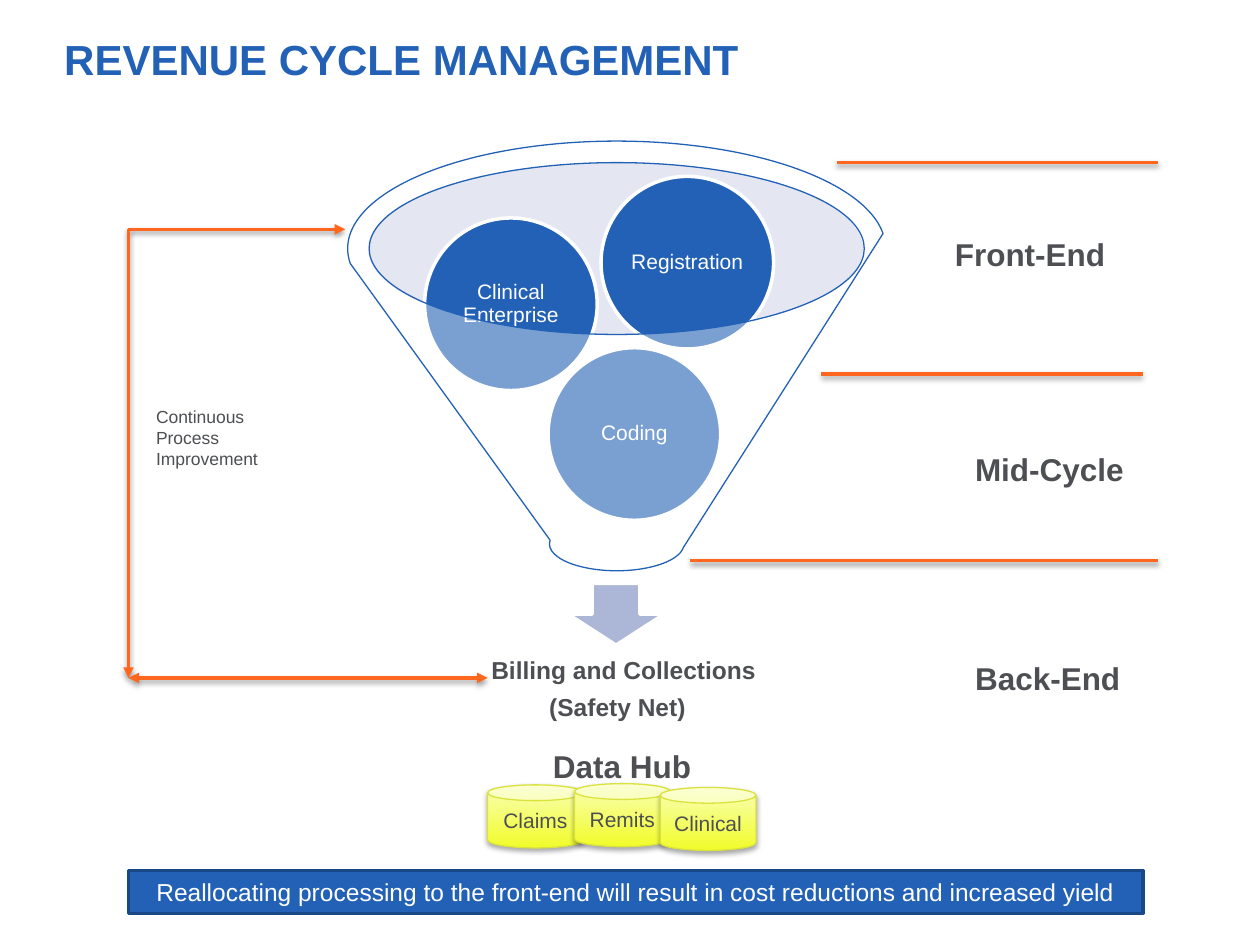
import lxml.etree
import pptx
import pptx.dml.color
import pptx.enum.shapes
import pptx.enum.text
import pptx.oxml.ns
import pptx.util

Inches, Pt = pptx.util.Inches, pptx.util.Pt
SHAPE = pptx.enum.shapes.MSO_SHAPE
ALIGN = pptx.enum.text.PP_ALIGN
ANCHOR = pptx.enum.text.MSO_ANCHOR
qn = pptx.oxml.ns.qn

FONT = "Arial"
COLORS = {
    "blue": "2261B5", "navy": "194886", "mist": "BDC5DE", "arrow": "ACB7D7",
    "orange": "FF671F", "gray": "4D4F53", "white": "FFFFFF", "black": "000000",
    "yellow": "F1FC2A", "pale_yellow": "F9FFB3", "can_edge": "DAE33D",
}


def rgb(name):
    return pptx.dml.color.RGBColor.from_string(COLORS[name])


def add_child(parent, tag, **attributes):
    child = lxml.etree.SubElement(parent, qn(tag))
    for key, value in attributes.items():
        child.set(key, str(value))
    return child


def add_shadow(effects, opacity):
    """Put a soft shadow that falls straight down into an effect list."""
    shadow = add_child(effects, "a:outerShdw", blurRad=Pt(3.1), dist=Pt(1.7),
                       dir=90 * 60000, rotWithShape=0)
    color = add_child(shadow, "a:srgbClr", val=COLORS["black"])
    add_child(color, "a:alpha", val=opacity * 1000)


def write(frame, lines, size, color="gray", bold=False, align=ALIGN.LEFT,
          spacing=None, after=None):
    frame.word_wrap = True
    for index, line in enumerate(lines):
        paragraph = frame.paragraphs[0] if index == 0 else frame.add_paragraph()
        paragraph.alignment = align
        paragraph.line_spacing = spacing
        paragraph.space_after = after
        run = paragraph.add_run()
        run.text = line
        run.font.name, run.font.size, run.font.bold = FONT, Pt(size), bold
        run.font.color.rgb = rgb(color)


def set_insets(frame, inset):
    frame.margin_left = frame.margin_right = Inches(inset)
    frame.margin_top = frame.margin_bottom = Inches(inset)


def add_label(slide, box, lines, size, **style):
    frame = slide.shapes.add_textbox(*map(Inches, box)).text_frame
    write(frame, lines, size, **style)
    return frame


def add_part(slide, kind, box, fill, line=None, width=0.75, opacity=None):
    part = slide.shapes.add_shape(kind, *map(Inches, box))
    part.shadow.inherit = False
    part.fill.solid()
    part.fill.fore_color.rgb = rgb(fill)
    if opacity is not None:
        color = part.fill._xPr.find(qn("a:solidFill"))[0]
        add_child(color, "a:alpha", val=opacity * 1000)
    if line:
        part.line.color.rgb = rgb(line)
        part.line.width = Pt(width)
    else:
        part.line.fill.background()
    return part


def add_rule(slide, start, end, arrowheads=()):
    rule = slide.shapes.add_connector(
        pptx.enum.shapes.MSO_CONNECTOR.STRAIGHT, *map(Inches, start + end))
    rule.line.color.rgb = rgb("orange")
    rule.line.width = Pt(2)
    for arrowhead in arrowheads:
        add_child(rule.line._get_or_add_ln(), arrowhead, type="triangle")
    add_shadow(add_child(rule._element.spPr, "a:effectLst"), 38)


def add_title(slide, box):
    title = slide.shapes.title
    title.left, title.top, title.width, title.height = map(Inches, box)
    title.text_frame.vertical_anchor = ANCHOR.TOP
    write(title.text_frame, ["REVENUE CYCLE MANAGEMENT"], 24, color="blue",
          bold=True, spacing=0.9)


def add_funnel(slide, box):
    """Funnel with the three inputs, its outlet arrow and the outcome."""
    left, top, width, height = box
    add_part(slide, SHAPE.OVAL, (left + 0.16, top + 0.17, 3.93, 1.37),
             "mist", opacity=40)
    add_part(slide, SHAPE.DOWN_ARROW, (left + 1.75, top + 3.51, 0.76, 0.49),
             "arrow", "white", 2)
    outcome = add_label(
        slide, (left + 0.23, top + 3.9, 3.82, 0.91),
        ["Billing and Collections", "(Safety Net)"], 14, bold=True,
        align=ALIGN.CENTER, spacing=0.9, after=Pt(6))
    set_insets(outcome, 0.11)
    outcome.vertical_anchor = ANCHOR.MIDDLE
    outcome.paragraphs[0]._p.get_or_add_pPr().set("marL", str(Inches(0.1)))

    inputs = [("Coding", 1.59, 1.64), ("Clinical Enterprise", 0.61, 0.61),
              ("Registration", 2.01, 0.28)]
    for name, dx, dy in inputs:
        circle = add_part(slide, SHAPE.OVAL, (left + dx, top + dy, 1.37, 1.37),
                          "blue", "white", 2)
        set_insets(circle.text_frame, 0.02)
        circle.text_frame.vertical_anchor = ANCHOR.MIDDLE
        write(circle.text_frame, [name], 12, color="white",
              align=ALIGN.CENTER, spacing=0.9)
    add_part(slide, SHAPE.FUNNEL, (left, top, width, height), "white", "blue",
             opacity=40)


def add_stages(slide, box):
    """Stage names at the right, each under its dividing line."""
    left, top, width, _ = box
    right = left + width
    stages = [("Front-End", 1.16, 3.71, 0, 2.0, 0.53),
              ("Mid-Cycle", 1.04, 3.59, 1.68, 2.16, 2.23),
              ("Back-End", 0, 3.71, 3.16, 2.16, 3.89)]
    for name, start, end, line_y, name_x, name_y in stages:
        add_rule(slide, (left + start, top + line_y), (left + end, top + line_y))
        add_label(slide, (left + name_x, top + name_y, right - left - 1.69, 0.4),
                  [name], 18, bold=True)


def add_feedback_loop(slide, box):
    left, top, width, height = box
    bottom = top + height
    add_rule(slide, (left, top), (left + 1.72, top), ["a:tailEnd"])
    add_rule(slide, (left, top), (left, bottom), ["a:tailEnd"])
    add_rule(slide, (left, bottom), (left + width, bottom),
             ["a:headEnd", "a:tailEnd"])
    add_label(slide, (left + 0.12, top + 1.35, 1.14, 0.61),
              ["Continuous Process Improvement"], 10)


def add_data_hub(slide, box):
    left, top, _, _ = box
    stores = [("Claims", 0, 0.35), ("Remits", 0.69, 0.34), ("Clinical", 1.37, 0.37)]
    for name, dx, dy in stores:
        store = add_part(slide, SHAPE.CAN, (left + dx, top + dy, 0.76, 0.5),
                         "yellow", "can_edge")
        store.fill.gradient()
        store.fill.gradient_angle = 90
        for stop, color in zip(store.fill.gradient_stops, ("yellow", "pale_yellow")):
            stop.color.rgb = rgb(color)
        add_shadow(store._element.spPr.find(qn("a:effectLst")), 35)
        store.text_frame.vertical_anchor = ANCHOR.MIDDLE
        write(store.text_frame, [name], 12, align=ALIGN.CENTER)
    add_label(slide, (left + 0.42, top, 1.73, 0.4), ["Data Hub"], 18, bold=True)


def add_banner(slide, box):
    banner = add_part(slide, SHAPE.RECTANGLE, box, "blue", "navy", 2)
    banner.text_frame.vertical_anchor = ANCHOR.MIDDLE
    write(banner.text_frame,
          ["Reallocating processing to the front-end will result in cost "
           "reductions and increased yield"], 14, color="white", align=ALIGN.CENTER)


def main():
    deck = pptx.Presentation()
    deck.slide_width, deck.slide_height = Inches(10), Inches(7.5)
    slide = deck.slides.add_slide(deck.slide_layouts.get_by_name("Title Only"))
    add_title(slide, (0.41, 0.26, 9.21, 0.8))
    add_funnel(slide, (2.76, 1.12, 4.27, 3.41))
    add_stages(slide, (5.48, 1.29, 3.71, 4.29))
    add_feedback_loop(slide, (1.02, 1.82, 2.85, 3.56))
    add_banner(slide, (1.02, 6.91, 8.05, 0.34))
    add_data_hub(slide, (3.87, 5.88, 2.13, 0.87))
    deck.save("out.pptx")


if __name__ == "__main__":
    main()
